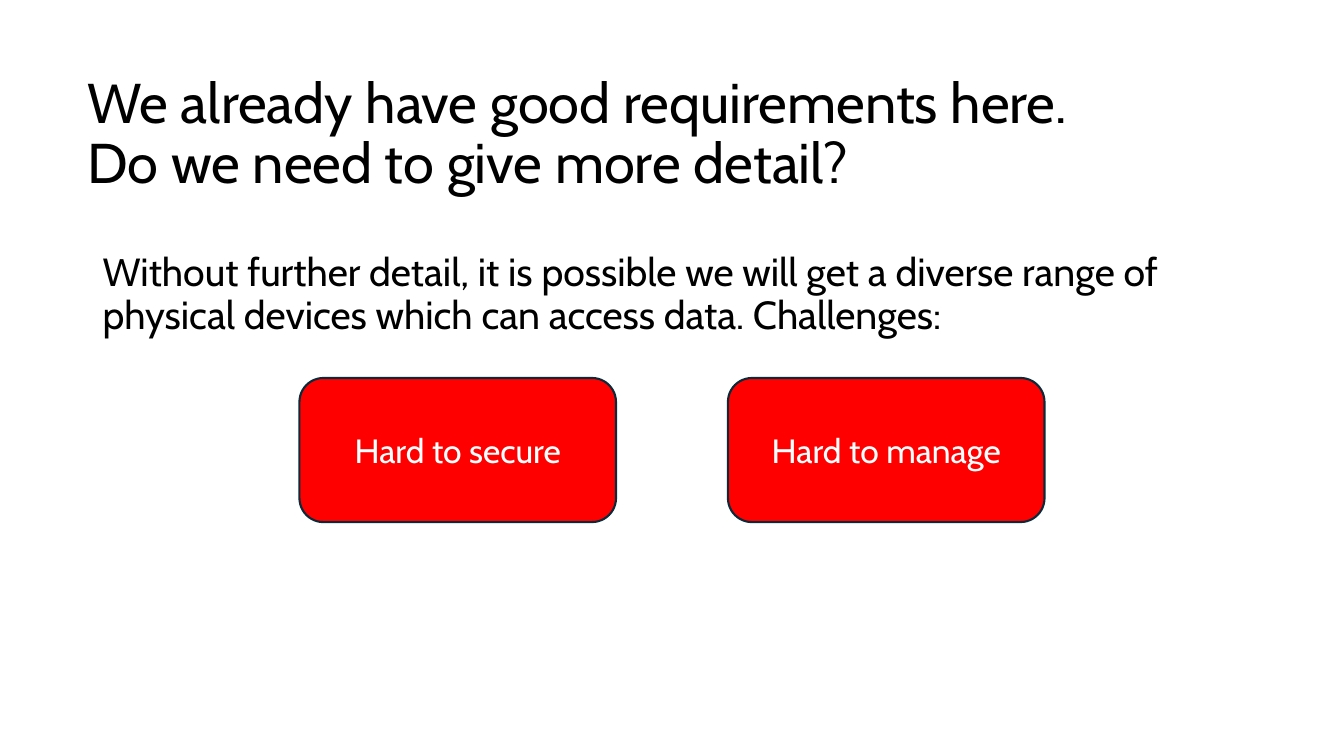
from dataclasses import dataclass

from pptx import Presentation
from pptx.dml.color import RGBColor
from pptx.enum.shapes import MSO_SHAPE
from pptx.enum.text import MSO_ANCHOR, PP_ALIGN
from pptx.slide import Slide
from pptx.text.text import TextFrame
from pptx.util import Inches, Pt

COLORS = {"text": "000000", "card": "FF0000", "outline": "092A39", "label": "FFFFFF"}
FONT = "Cabin"
CARD_LEFT, CARD_TOP, CARD_WIDTH, CARD_HEIGHT = 2.97, 3.75, 3.14, 1.43
CARD_PITCH = 4.25
CHALLENGES = ["Hard to secure", "Hard to manage"]


@dataclass
class Passage:
    lines: list[str]
    left: float
    top: float
    width: float
    height: float
    size: int
    space_before: int
    anchor: MSO_ANCHOR


PASSAGES = [
    Passage(
        ["We already have good requirements here. ", "Do we need to give more detail?"],
        0.77, 0.62, 11.8, 1.45, 40, 0, MSO_ANCHOR.MIDDLE,
    ),
    Passage(
        ["Without further detail, it is possible we will get a diverse range of "
         "physical devices which can access data. Challenges:"],
        0.92, 2.46, 11.5, 4.68, 28, 10, MSO_ANCHOR.TOP,
    ),
]


def write_lines(frame: TextFrame, lines: list[str], size: int, color: str) -> None:
    """Fill the first paragraph, with a line break between lines."""
    frame.word_wrap = True
    paragraph = frame.paragraphs[0]
    for index, line in enumerate(lines):
        if index:
            paragraph.add_line_break()
        run = paragraph.add_run()
        run.text = line
        run.font.name = FONT
        run.font.size = Pt(size)
        run.font.color.rgb = RGBColor.from_string(COLORS[color])


def add_passage(slide: Slide, passage: Passage) -> None:
    frame = slide.shapes.add_textbox(
        Inches(passage.left), Inches(passage.top),
        Inches(passage.width), Inches(passage.height),
    ).text_frame
    frame.vertical_anchor = passage.anchor
    write_lines(frame, passage.lines, passage.size, "text")
    frame.paragraphs[0].line_spacing = 0.9
    frame.paragraphs[0].space_before = Pt(passage.space_before)


def add_challenge_card(slide: Slide, label: str, left: float) -> None:
    card = slide.shapes.add_shape(
        MSO_SHAPE.ROUNDED_RECTANGLE,
        Inches(left), Inches(CARD_TOP), Inches(CARD_WIDTH), Inches(CARD_HEIGHT),
    )
    card.shadow.inherit = False
    card.fill.solid()
    card.fill.fore_color.rgb = RGBColor.from_string(COLORS["card"])
    card.line.color.rgb = RGBColor.from_string(COLORS["outline"])
    card.line.width = Pt(1.5)
    card.text_frame.vertical_anchor = MSO_ANCHOR.MIDDLE
    write_lines(card.text_frame, [label], 24, "label")
    card.text_frame.paragraphs[0].alignment = PP_ALIGN.CENTER


def main() -> None:
    deck = Presentation()
    deck.slide_width, deck.slide_height = Inches(13.33), Inches(7.5)
    slide = deck.slides.add_slide(deck.slide_layouts[6])
    for passage in PASSAGES:
        add_passage(slide, passage)
    for column, challenge in enumerate(CHALLENGES):
        add_challenge_card(slide, challenge, CARD_LEFT + column * CARD_PITCH)
    deck.save("out.pptx")


if __name__ == "__main__":
    main()
